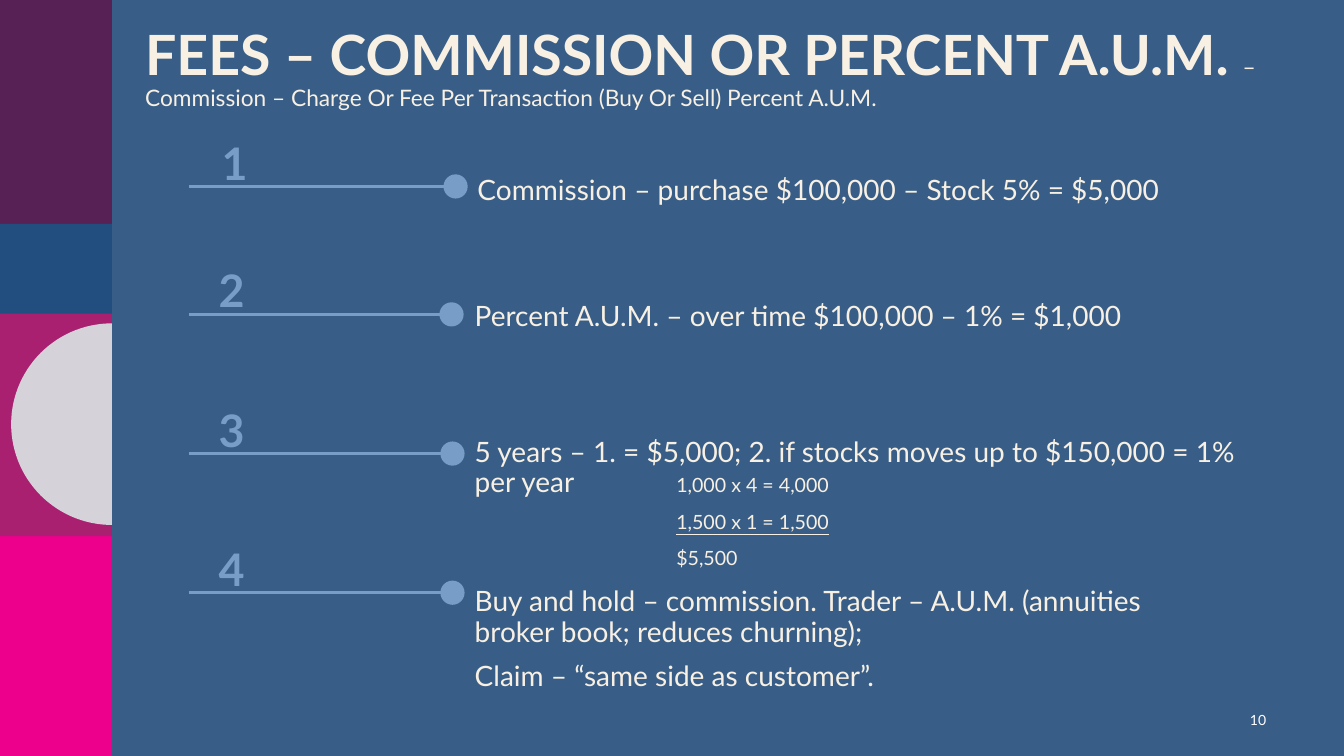
import math

from lxml import etree
from pptx import Presentation
from pptx.dml.color import RGBColor
from pptx.enum import shapes, text
from pptx.oxml.ns import qn
from pptx.util import Pt

BACKGROUND = RGBColor(0x38, 0x5E, 0x88)
PURPLE = RGBColor(0x58, 0x21, 0x56)
NAVY = RGBColor(0x22, 0x4E, 0x7F)
BERRY = RGBColor(0xAA, 0x20, 0x70)
PINK = RGBColor(0xEC, 0x00, 0x8C)
SILVER = RGBColor(0xD5, 0xD2, 0xDA)
SKY = RGBColor(0x78, 0x9E, 0xC7)
CREAM = RGBColor(0xF8, 0xF0, 0xE3)
WHITE = RGBColor(0xFF, 0xFF, 0xFF)

BODY = {"size": Pt(20), "name": "Lato"}
SMALL = {"size": Pt(14), "name": "Lato"}
NUMBER = {"size": Pt(32), "name": "Lato", "bold": True}

ROWS = [
    {"line": 133.2, "dot": 316.8, "text": (334, 122.4, 532, 62),
     "paras": [[("Commission – purchase $100,000 – Stock 5% = $5,000", BODY)]]},
    {"line": 224.6, "dot": 313.9, "text": (332, 212.4, 485, 46),
     "paras": [[("Percent A.U.M. – over time $100,000 – 1% = $1,000", BODY)]]},
    {"line": 324, "dot": 314.6, "text": (332, 309.6, 559.4, 142.6),
     "paras": [[("5 years – 1. = $5,000; 2. if stocks moves up to $150,000 = 1% per year\t", BODY),
                ("1,000 x 4 = 4,000", SMALL)],
               [("\t", SMALL), ("1,500 x 1 = 1,500", {**SMALL, "underline": True})],
               [("\t$5,500", SMALL)]]},
    {"line": 423.4, "dot": 314.6, "text": (332, 416.2, 548.6, 103),
     "paras": [[("Buy and hold – commission. Trader – A.U.M. (annuities broker book; "
                 "reduces churning);", BODY)],
               [("Claim – “same side as customer”.", BODY)]]},
]


def paint(shape, color):
    """Give a shape a flat fill without outline or shadow."""
    shape.shadow.inherit = False
    shape.fill.solid()
    shape.fill.fore_color.rgb = color
    shape.line.fill.background()


def write(frame, paras, color, anchor=text.MSO_ANCHOR.TOP, align=text.PP_ALIGN.LEFT, tab=None):
    """Fill a text frame with paragraphs of formatted spans."""
    frame.word_wrap = True
    frame.auto_size = text.MSO_AUTO_SIZE.NONE
    frame.vertical_anchor = anchor
    for index, spans in enumerate(paras):
        para = frame.add_paragraph() if index else frame.paragraphs[0]
        layout = {"alignment": align, "line_spacing": 0.9, "space_before": Pt(10 if index else 0)}
        for name, value in layout.items():
            setattr(para, name, value)
        if tab:
            stops = etree.SubElement(para._p.get_or_add_pPr(), qn("a:tabLst"))
            etree.SubElement(stops, qn("a:tab"), pos=str(Pt(tab)), algn="l")
        for words, font in spans:
            span = para.add_run()
            span.text = words
            span.font.color.rgb = color
            for name, value in font.items():
                setattr(span.font, name, value)


def add_text(page, box, paras, color, **options):
    """Add a text box at the given left, top, width and height."""
    shape = page.shapes.add_textbox(*map(Pt, box))
    write(shape.text_frame, paras, color, **options)


def add_strip(page, left, top, width):
    """Draw the coloured side strip with its half disc."""
    bands = [(380, 160, PINK), (223, 160, BERRY), (0, 160, PURPLE), (160, 64, NAVY)]
    for offset, height, color in bands:
        band = page.shapes.add_shape(shapes.MSO_SHAPE.RECTANGLE, Pt(left), Pt(top + offset),
                                     Pt(width), Pt(height))
        paint(band, color)
    radius, middle = 72, top + 303
    arc = [(Pt(left + width - radius * math.sin(math.radians(angle))),
            Pt(middle - radius * math.cos(math.radians(angle)))) for angle in range(0, 181, 3)]
    builder = page.shapes.build_freeform(*arc[0])
    builder.add_line_segments(arc[1:], close=True)
    paint(builder.convert_to_shape(), SILVER)


def add_title(page, left, top, width, height):
    """Place the title with its small continuation."""
    title = page.shapes.title
    place = {"left": left, "top": top, "width": width, "height": height}
    for name, value in place.items():
        setattr(title, name, Pt(value))
    heading = {"size": Pt(39.6), "name": "Lato", "bold": True}
    detail = {"size": Pt(16.2), "name": "Lato", "bold": False}
    write(title.text_frame, [[
        ("FEES – COMMISSION OR PERCENT A.U.M. ", heading),
        ("– Commission – Charge Or Fee Per Transaction (Buy Or Sell) Percent A.U.M.", detail),
    ]], CREAM)


def add_row(page, number, row):
    """Draw one numbered line, its end dot and its text."""
    level, dot_left, size = row["line"], row["dot"], 17.3
    line = page.shapes.add_connector(shapes.MSO_CONNECTOR.STRAIGHT, Pt(135), Pt(level),
                                     Pt(317.3), Pt(level))
    line.line.color.rgb = SKY
    line.line.width = Pt(2)
    etree.SubElement(line._element.spPr, qn("a:effectLst"))
    dot = page.shapes.add_shape(shapes.MSO_SHAPE.OVAL, Pt(dot_left), Pt(level - size / 2),
                                Pt(size), Pt(size))
    paint(dot, SKY)
    number_left = row["text"][0] - 224
    add_text(page, (number_left, level - 46, 115, 62), [[(str(number), NUMBER)]], SKY,
             anchor=text.MSO_ANCHOR.MIDDLE, align=text.PP_ALIGN.CENTER)
    add_text(page, row["text"], row["paras"], CREAM, tab=144)


def main():
    """Build the fees slide."""
    deck = Presentation()
    deck.slide_width, deck.slide_height = Pt(960), Pt(540)
    page = deck.slides.add_slide(deck.slide_layouts[5])
    page.background.fill.solid()
    page.background.fill.fore_color.rgb = BACKGROUND
    add_strip(page, 0, 0, 80)
    add_title(page, 96.5, 15.8, 837.4, 94.3)
    for number, row in enumerate(ROWS, 1):
        add_row(page, number, row)
    add_text(page, (875.5, 500.4, 36, 28.8), [[("10", {"size": Pt(10), "name": "Lato"})]], WHITE,
             anchor=text.MSO_ANCHOR.MIDDLE, align=text.PP_ALIGN.RIGHT)
    deck.save("out.pptx")


if __name__ == "__main__":
    main()
